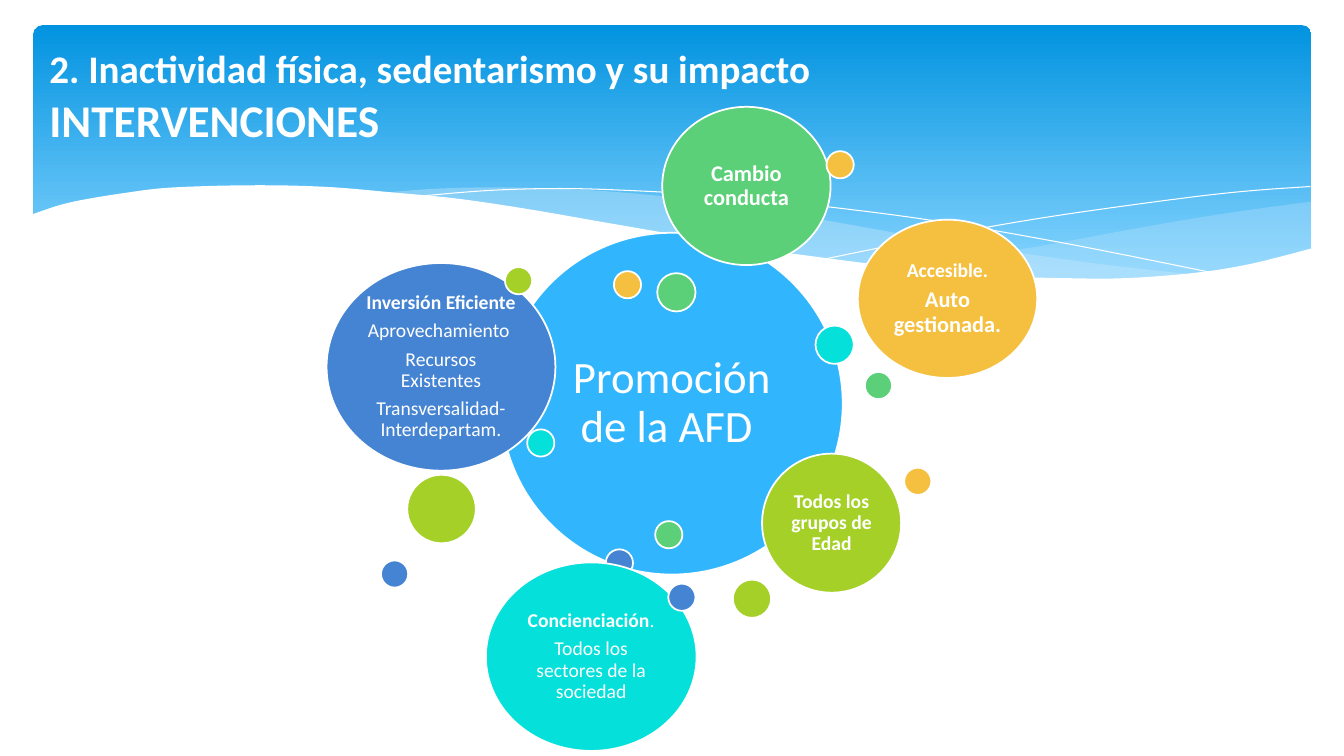
from dataclasses import dataclass

from lxml.etree import SubElement
from pptx import Presentation
from pptx.dml.color import RGBColor
from pptx.enum.shapes import MSO_SHAPE
from pptx.enum.text import MSO_ANCHOR, PP_ALIGN
from pptx.oxml.ns import qn
from pptx.util import Inches, Pt


@dataclass(frozen=True)
class Theme:
    font: str = "Calibri"
    white: str = "FFFFFF"
    sky: str = "31B6FD"
    blue: str = "4584D3"
    green: str = "5BD078"
    lime: str = "A5D028"
    amber: str = "F5C040"
    aqua: str = "05E0DB"
    mist: str = "C6E7FC"
    header_top: str = "0293E0"
    header_bottom: str = "83D3FE"
    title: float = 27.9
    subtitle: float = 32.4
    core: float = 32
    label: float = 16
    body: float = 14
    outline: float = 1.25


THEME = Theme()
COLUMNS, ROWS = 133.33, 75  # grid of square cells
SMALL, MEDIUM, LARGE = 2.7, 3.8, 6.8  # dot diameters in cells


def cells(count):
    return Inches(count / 10)


def paint(shape, color=None, line=None, width=0, alpha=None):
    shape.shadow.inherit = False
    if color:
        shape.fill.solid()
        shape.fill.fore_color.rgb = RGBColor.from_string(color)
        if alpha:
            tint = shape.fill._xPr.find(".//" + qn("a:srgbClr"))
            SubElement(tint, qn("a:alpha")).set("val", str(alpha * 1000))
    else:
        shape.fill.background()
    if line:
        shape.line.color.rgb = RGBColor.from_string(line)
        shape.line.width = Pt(width)
    else:
        shape.line.fill.background()


def write(shape, paragraphs, align=PP_ALIGN.CENTER, anchor=MSO_ANCHOR.MIDDLE,
          insets=(0.6, 0.6), spacing=None, after=0):
    """Each paragraph is a list of (text, size, bold); after is a share of the size."""
    frame = shape.text_frame
    frame.word_wrap = True
    frame.vertical_anchor = anchor
    frame.margin_left = frame.margin_right = cells(insets[0])
    frame.margin_top = frame.margin_bottom = cells(insets[1])
    for index, spans in enumerate(paragraphs):
        para = frame.add_paragraph() if index else frame.paragraphs[0]
        para.alignment = align
        para.line_spacing = spacing
        para.space_after = Pt(after * spans[0][1])
        for text, size, bold in spans:
            span = para.add_run()
            span.text = text
            span.font.name = THEME.font
            span.font.size = Pt(size)
            span.font.bold = bold
            span.font.color.rgb = RGBColor.from_string(THEME.white)


def smooth(knots, steps=5):
    """Points of a Catmull-Rom curve through the knots."""
    ends = [knots[0], *knots, knots[-1]]
    points = [knots[0]]
    for a, b, c, d in zip(ends, ends[1:], ends[2:], ends[3:]):
        for step in range(1, steps + 1):
            t = step / steps
            points.append(tuple(
                q + t * (r - p) / 2 + t**2 * (2 * p - 5 * q + 4 * r - s) / 2
                + t**3 * (3 * q - p - 3 * r + s) / 2
                for p, q, r, s in zip(a, b, c, d)))
    return points


def add_wave(page, points, closed=True, **look):
    (left, top), *rest = [(cells(x), cells(y)) for x, y in points]
    builder = page.shapes.build_freeform(left, top, scale=1.0)
    builder.add_line_segments(rest, close=closed)
    paint(builder.convert_to_shape(), **look)


def add_header(page):
    panel = page.shapes.add_shape(MSO_SHAPE.ROUNDED_RECTANGLE, cells(3.3), cells(2.5),
                                  cells(126.8), cells(27))
    panel.adjustments[0] = 0.034
    paint(panel)
    panel.fill.gradient()
    panel.fill.gradient_angle = 270
    stops = ((0, THEME.header_top), (0.9, THEME.header_bottom))
    for stop, (position, color) in zip(panel.fill.gradient_stops, stops):
        stop.position = position
        stop.color.rgb = RGBColor.from_string(color)

    right_top = [(130.1, 20), (122.7, 21), (114.7, 22.3), (103.8, 24.3), (97.2, 25.3), (88.2, 26.5)]
    right_bottom = [(88.2, 26.5), (95.8, 27.3), (102.5, 27.7), (109.9, 27.8), (116.3, 27.4),
                    (122.8, 26.5), (126.6, 25.7), (130.1, 24.7)]
    add_wave(page, smooth(right_top) + smooth(right_bottom), color=THEME.mist, alpha=29)

    middle_top = [(119, 27.3), (107.6, 26), (94.1, 24), (83.8, 22.2), (75.8, 20.8), (66.9, 19.6),
                  (58.9, 18.9), (50.6, 18.6), (43.7, 18.7), (38.2, 19.1)]
    middle_bottom = [(38.2, 19.1), (45.6, 19.9), (53.9, 21.1), (59.9, 22.2), (70.6, 24), (80.2, 25.5),
                     (90.7, 26.8), (99.8, 27.6), (107.6, 27.9), (113, 27.8), (119, 27.3)]
    add_wave(page, smooth(middle_top) + smooth(middle_bottom), color=THEME.mist, alpha=40)

    falling = [(41.2, 19.5), (48.4, 18.9), (55.5, 18.7), (62.5, 18.9), (71, 19.4), (81.1, 20.4),
               (92.7, 21.9), (106, 24.2), (121, 27.2)]
    rising = [(81.8, 25.7), (92.7, 23.5), (103.5, 21.6), (115.5, 19.9), (123.2, 19), (130, 18.5)]
    for strand in (falling, rising):
        add_wave(page, smooth(strand), closed=False, line=THEME.white)

    edge = [(130.3, 24.6), (124, 26.2), (118.3, 27.1), (111.6, 27.6), (105.8, 27.6), (99.2, 27.4),
            (91.8, 26.8), (83.4, 25.8), (74, 24.5), (67.1, 23.3), (59.6, 22), (52.1, 20.7),
            (45.3, 19.7), (39, 19.1), (33.3, 18.6), (28.2, 18.4), (23.5, 18.4), (19.4, 18.5),
            (15.8, 18.7), (12.7, 19.1), (8.9, 19.7), (6.1, 20.3), (3.1, 21.3)]
    add_wave(page, smooth(edge) + [(3.1, 32.9), (130.3, 32.9)], color=THEME.white)


def add_title(page):
    box = page.shapes.add_textbox(cells(3.7), cells(3.85), cells(80.3), cells(13.7))
    write(box, [[("2. Inactividad física, sedentarismo y su impacto", THEME.title, True)],
                [("INTERVENCIONES", THEME.subtitle, True)]],
          align=PP_ALIGN.LEFT, anchor=MSO_ANCHOR.TOP, insets=(1.2, 0.6))


def add_bubble(page, color, left, top, width, height=None, paragraphs=(), inset=0.6):
    bubble = page.shapes.add_shape(MSO_SHAPE.OVAL, cells(left), cells(top),
                                   cells(width), cells(height or width))
    paint(bubble, color, line=THEME.white, width=THEME.outline)
    if paragraphs:
        write(bubble, paragraphs, insets=(inset, inset), spacing=0.9, after=0.35)


def main():
    deck = Presentation()
    deck.slide_width, deck.slide_height = cells(COLUMNS), cells(ROWS)
    page = deck.slides.add_slide(deck.slide_layouts[6])
    add_header(page)
    add_title(page)

    core = [[("Promoción de la AFD ", THEME.core, False)]]
    investment = [[("Inversión Eficiente", THEME.body, True)],
                  [("Aprovechamiento ", THEME.body, False)],
                  [("Recursos Existentes", THEME.body, False)],
                  [("Transversalidad-Interdepartam.", THEME.body, False)]]
    access = [[("Accesible.", THEME.body, True)], [("Auto gestionada.", THEME.label, True)]]
    ages = [[("Todos los grupos de Edad", THEME.body, True)]]
    awareness = [[("Concienciación", THEME.body, True), (".", THEME.body, False)],
                 [("Todos los sectores de la sociedad", THEME.body, False)]]
    behaviour = [[("Cambio conducta", THEME.label, True)]]

    bubbles = [  # back to front
        (THEME.sky, 49.7, 23.1, 33.9, 33.9, core, 1.3),
        (THEME.blue, 60.1, 54.5, SMALL),
        (THEME.green, 85.8, 36.9, SMALL),
        (THEME.lime, 72.7, 57.5, MEDIUM),
        (THEME.amber, 60.9, 26.9, SMALL),
        (THEME.aqua, 52.3, 42.6, SMALL),
        (THEME.blue, 32.4, 26.1, 22.7, 20.6, investment),
        (THEME.green, 65.2, 27.1, MEDIUM),
        (THEME.lime, 40.4, 47.1, LARGE),
        (THEME.amber, 85.1, 21.8, 17.8, 15.7, access),
        (THEME.aqua, 80.9, 32.3, MEDIUM),
        (THEME.blue, 37.8, 55.6, SMALL),
        (THEME.green, 65, 51.7, SMALL),
        (THEME.lime, 75.6, 45, 13.8, 13.8, ages),
        (THEME.amber, 89.7, 46.4, SMALL),
        (THEME.aqua, 48.2, 55.8, 20.9, 18.7, awareness),
        (THEME.blue, 66.3, 57.9, SMALL),
        (THEME.green, 65.7, 10.6, 16.7, 15.7, behaviour, 0.7),
        (THEME.lime, 50.1, 26.5, SMALL),
        (THEME.amber, 82, 15, SMALL),
    ]
    for bubble in bubbles:
        add_bubble(page, *bubble)
    deck.save("out.pptx")


if __name__ == "__main__":
    main()
